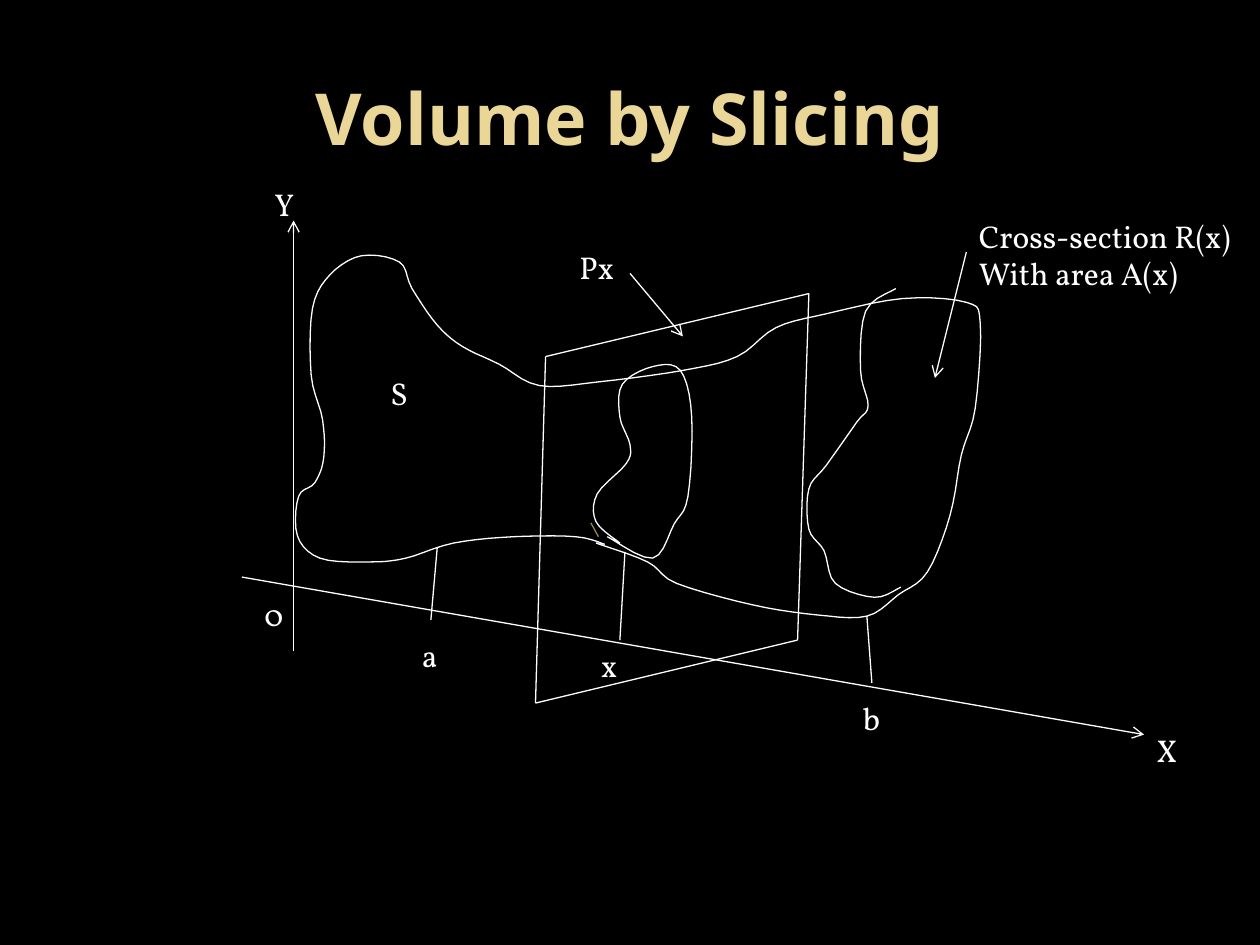
from lxml import etree
from pptx import Presentation
from pptx import util as u
from pptx.dml.color import RGBColor
from pptx.enum import shapes, text
from pptx.oxml.ns import qn

COLORS = {"background": "000000", "ink": "FFFFFF", "title": "EAD696", "tick": "998946"}
INCH = 2.54
LINE_WIDTH = u.Pt(0.75)
STEPS = 5

# Outline points are in hundredths of an inch on the slide.
SOLID = [
    (480, 432), (457, 426), (407, 426), (360, 431), (322, 443), (293, 446),
    (254, 443), (236, 425), (237, 394), (250, 383), (257, 363), (256, 333),
    (247, 298), (248, 245), (262, 218), (287, 203), (317, 208), (327, 229),
    (347, 258), (367, 275), (396, 289), (428, 306), (476, 303), (542, 294),
    (585, 283), (616, 260), (656, 249), (716, 237), (767, 240), (778, 257),
    (774, 324), (763, 361), (754, 409), (736, 454), (713, 472), (688, 489),
    (648, 488), (597, 480), (537, 463), (514, 446), (473, 431),
]
RIGHT_FACE = [
    (715, 466), (694, 474), (663, 463), (654, 437), (642, 420), (642, 388),
    (656, 369), (680, 335), (689, 322), (683, 294), (687, 247), (711, 229),
]
SLICE = [
    (492, 431), (473, 414), (474, 392), (497, 368), (500, 353), (492, 331),
    (494, 305), (518, 291), (540, 294), (549, 331), (546, 394), (535, 416),
    (518, 443), (482, 426),
]
STRAY_TICK = [(475, 426), (469, 415)]

# Lines and labels are in inches.
ARROWS = [
    (2.33, 5.17, 2.33, 1.75), (1.92, 4.58, 9.08, 5.83),
    (5, 2.17, 5.42, 2.67), (7.67, 2, 7.42, 3),
]
PLANE = [(4.33, 2.83), (6.42, 2.33), (6.33, 5.08), (4.25, 5.58)]
DROP_LINES = [
    (3.47, 4.35, 3.42, 4.92), (4.96, 4.38, 4.92, 5.08), (6.88, 4.89, 6.92, 5.42),
]
LABELS = [
    ("Y", 2.08, 1.42, 0.25), ("X", 9.08, 5.75, 0.42), ("0", 2, 4.67, 0.33),
    ("S", 3, 2.92, 0.42), ("Px", 4.5, 1.92, 0.58), ("a", 3.25, 5, 0.25),
    ("x", 4.67, 5.08, 0.33), ("b", 6.75, 5.5, 0.25),
    ("Cross-section R(x)\nWith area A(x)", 7.67, 1.67, 2.33),
]


def rgb(name):
    return RGBColor.from_string(COLORS[name])


def cm(*inches):
    return [u.Cm(value * INCH) for value in inches]


def format_runs(frame, font_name, size, color, bold=False):
    for paragraph in frame.paragraphs:
        for run in paragraph.runs:
            run.font.name = font_name
            run.font.size = u.Pt(size)
            run.font.bold = bold
            run.font.color.rgb = rgb(color)


def set_title(slide, wording):
    title = slide.shapes.title
    title.left, title.top, title.width, title.height = cm(0.5, 0.3, 9, 1.25)
    frame = title.text_frame
    frame.text = wording
    frame.vertical_anchor = text.MSO_ANCHOR.MIDDLE
    frame.paragraphs[0].alignment = text.PP_ALIGN.CENTER
    format_runs(frame, "Noto Sans", 41, "title", bold=True)


def add_label(slide, wording, left, top, width):
    height = 0.71 if "\n" in wording else 0.4
    frame = slide.shapes.add_textbox(*cm(left, top, width, height)).text_frame
    frame.word_wrap = wording != "0"
    frame.text = wording
    format_runs(frame, "Vollkorn", 18, "ink")


def add_line(slide, ends, arrow=False):
    line = slide.shapes.add_connector(shapes.MSO_CONNECTOR.STRAIGHT, *cm(*ends))
    line.line.color.rgb = rgb("ink")
    line.line.width = LINE_WIDTH
    properties = line._element.spPr
    if arrow:
        etree.SubElement(properties.find(qn("a:ln")), qn("a:tailEnd"), type="arrow")
    etree.SubElement(properties, qn("a:effectLst"))


def smooth(points):
    """Return points along a Catmull-Rom curve through the given points."""
    padded = points[:1] + points + points[-1:]
    curve = points[:1]
    for window in zip(padded, padded[1:], padded[2:], padded[3:]):
        for step in range(1, STEPS + 1):
            t = step / STEPS
            curve = curve + [tuple(
                b + t * (c - a + t * (2 * a - 5 * b + 4 * c - d
                                      + t * (3 * b - a - 3 * c + d))) / 2
                for a, b, c, d in zip(*window)
            )]
    return curve


def add_outline(slide, points, color="ink"):
    """Draw an open, unfilled outline through the points."""
    grid = [(round(10 * x), round(10 * y)) for x, y in smooth(points)]
    builder = slide.shapes.build_freeform(*grid[0], scale=u.Cm(INCH) / 1000)
    builder.add_line_segments(grid[1:], close=False)
    outline = builder.convert_to_shape()
    outline.fill.background()
    outline.line.color.rgb = rgb(color)
    outline.line.width = LINE_WIDTH
    outline.shadow.inherit = False


def main():
    deck = Presentation()
    deck.slide_width, deck.slide_height = cm(10, 7.5)
    slide = deck.slides.add_slide(deck.slide_layouts.get_by_name("Title Only"))
    slide.background.fill.solid()
    slide.background.fill.fore_color.rgb = rgb("background")

    set_title(slide, "Volume by Slicing")
    for ends in ARROWS:
        add_line(slide, ends, arrow=True)
    for corner, following in zip(PLANE, PLANE[1:] + PLANE[:1]):
        add_line(slide, corner + following)
    add_outline(slide, STRAY_TICK, "tick")
    for points in (SOLID, RIGHT_FACE, SLICE):
        add_outline(slide, points)
    for ends in DROP_LINES:
        add_line(slide, ends)
    for label in LABELS:
        add_label(slide, *label)

    deck.save("out.pptx")


if __name__ == "__main__":
    main()
